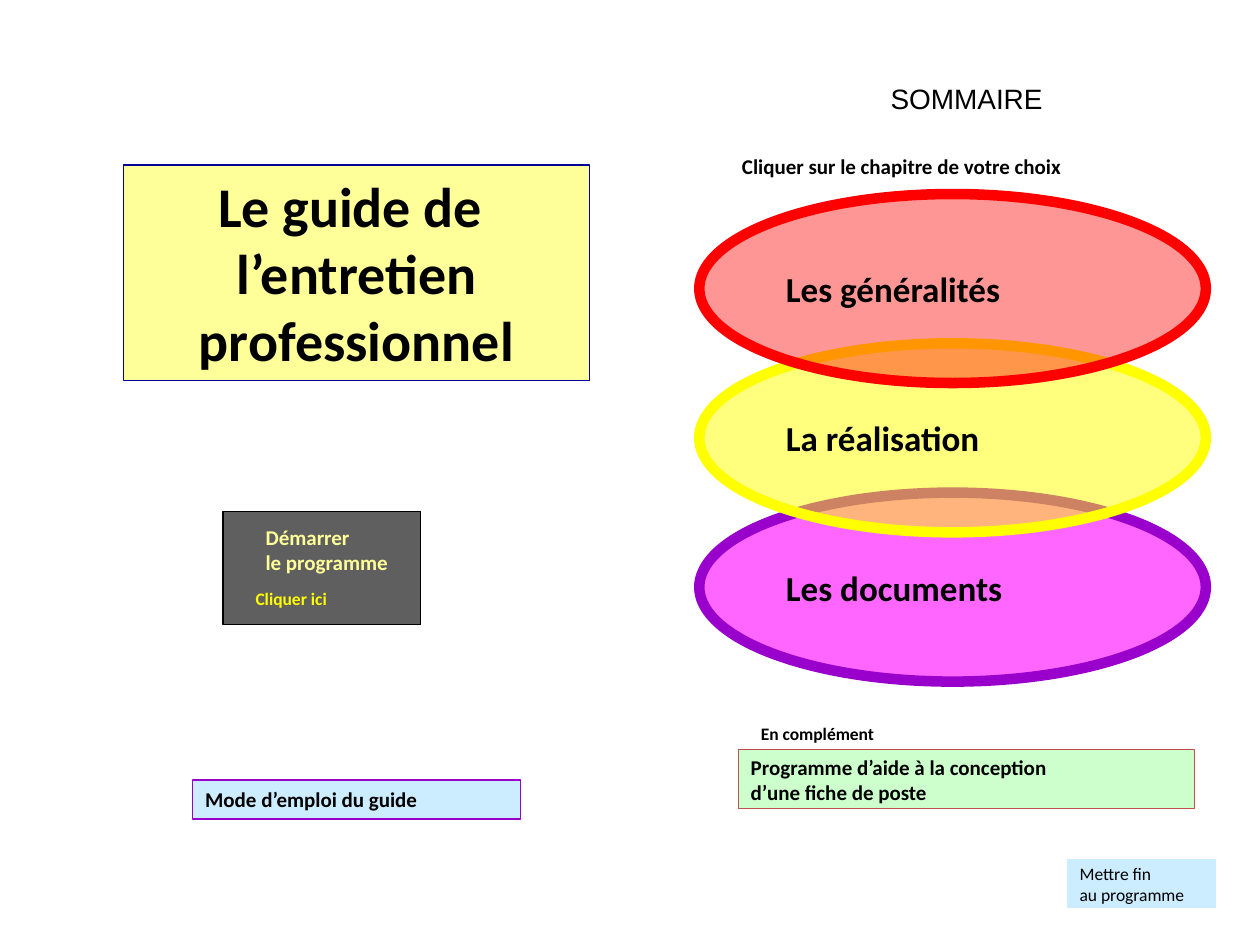
"""Build the cover and contents slide of the professional interview guide."""
from dataclasses import dataclass

from lxml.etree import SubElement
from pptx import Presentation
from pptx.dml.color import RGBColor
from pptx.enum.shapes import MSO_SHAPE as Shape
from pptx.enum.text import MSO_ANCHOR as Anchor, MSO_AUTO_SIZE as AutoSize, PP_ALIGN as Align
from pptx.oxml.ns import qn
from pptx.util import Inches, Pt


@dataclass(frozen=True)
class Theme:
    """Colours, fonts and type sizes of the slide."""
    font: str = "Calibri"
    heading_font: str = "Arial"
    black: str = "000000"
    red: str = "FF0000"
    yellow: str = "FFFF00"
    magenta: str = "FF00FF"
    purple: str = "9900CC"
    cream: str = "FFFF99"
    navy: str = "000099"
    grey: str = "5F5F5F"
    sky: str = "CCECFF"
    mint: str = "CCFFCC"
    brick: str = "C0504D"
    title: int = 32
    chapter: int = 20
    heading: int = 16
    body: int = 12
    small: int = 10
    thin: float = 0.75
    thick: int = 6


THEME = Theme()


def write_text(shape, lines, size, color=THEME.black, font=THEME.font, bold=True,
               align=Align.LEFT, anchor=Anchor.TOP, wrap=True):
    """Fill a shape with one formatted paragraph for each line."""
    frame = shape.text_frame
    frame_format = {"word_wrap": wrap, "auto_size": AutoSize.NONE, "vertical_anchor": anchor}
    for name, value in frame_format.items():
        setattr(frame, name, value)
    frame.text = "\n".join(lines)
    run_format = {"name": font, "size": Pt(size), "bold": bold}
    for paragraph in frame.paragraphs:
        paragraph.alignment = align
        for run in paragraph.runs:
            for name, value in run_format.items():
                setattr(run.font, name, value)
            run.font.color.rgb = RGBColor.from_string(color)


def paint(shape, fill, line=None, width=THEME.thin, opacity=100):
    """Set the fill, its opacity and the outline of a shape."""
    shape.fill.solid()
    shape.fill.fore_color.rgb = RGBColor.from_string(fill)
    if opacity < 100:
        color = shape.fill._xPr.find(qn("a:solidFill"))[0]
        SubElement(color, qn("a:alpha")).set("val", str(opacity * 1000))
    if line is None:
        shape.line.fill.background()
    else:
        shape.line.color.rgb = RGBColor.from_string(line)
        shape.line.width = Pt(width)


def add_panel(shapes, kind, box, fill, line=None, **style):
    """Add a painted preset shape without a shadow."""
    shape = shapes.add_shape(kind, *map(Inches, box))
    shape.shadow.inherit = False
    paint(shape, fill, line, **style)
    return shape


def add_label(shapes, box, lines, size, **style):
    """Add a plain text box."""
    label = shapes.add_textbox(*map(Inches, box))
    write_text(label, lines, size, **style)


def place_title(slide):
    """Move and format the title placeholder as the cover panel."""
    title = slide.shapes.title
    box = dict(zip(("left", "top", "width", "height"), (0.98, 1.31, 3.7, 1.71)))
    for name, value in box.items():
        setattr(title, name, Inches(value))
    paint(title, THEME.cream, THEME.navy)
    write_text(title, ["Le guide de ", "l’entretien professionnel"], THEME.title,
               align=Align.CENTER)


def add_chapters(shapes):
    """Stack the overlapping chapter ellipses from the bottom one up."""
    chapters = [
        ("Les généralités", THEME.red, THEME.red, 41),
        ("La réalisation", THEME.yellow, THEME.yellow, 51),
        ("Les documents", THEME.magenta, THEME.purple, 60),
    ]
    top, step = 1.54, 1.185
    for index, (name, fill, line, opacity) in reversed(list(enumerate(chapters))):
        ellipse = add_panel(shapes, Shape.OVAL, (5.55, top + index * step, 4.02, 1.5),
                            fill, line, width=THEME.thick, opacity=opacity)
        write_text(ellipse, [name], THEME.chapter, anchor=Anchor.MIDDLE)


def add_start_button(shapes):
    """Add the grouped start button and its prompt."""
    group = shapes.add_group_shape()
    add_panel(group.shapes, Shape.RECTANGLE, (1.77, 4.06, 1.57, 0.9), THEME.grey, THEME.black)
    add_label(group.shapes, (2.01, 4.15, 1.97, 0.43), ["Démarrer", "le programme"],
              THEME.body, color=THEME.cream, anchor=Anchor.MIDDLE)
    add_label(shapes, (1.93, 4.62, 1.26, 0.27), ["Cliquer ici"], THEME.small,
              color=THEME.yellow)


def add_links(shapes):
    """Add the link panels at the foot of the slide."""
    guide = add_panel(shapes, Shape.RECTANGLE, (1.53, 6.19, 2.6, 0.31),
                      THEME.sky, THEME.purple)
    write_text(guide, ["Mode d’emploi du guide"], THEME.body)
    job_sheet = add_panel(shapes, Shape.RECTANGLE, (5.86, 5.95, 3.62, 0.47),
                          THEME.mint, THEME.brick)
    write_text(job_sheet, ["Programme d’aide à la conception", "d’une fiche de poste"],
               THEME.body, anchor=Anchor.MIDDLE)
    leave = add_panel(shapes, Shape.ACTION_BUTTON_CUSTOM, (8.47, 6.82, 1.18, 0.39), THEME.sky)
    write_text(leave, ["Mettre fin", "au programme"], THEME.small, bold=False,
               anchor=Anchor.MIDDLE)


def main():
    """Build and save the slide."""
    presentation = Presentation()
    presentation.slide_width, presentation.slide_height = Inches(10), Inches(7.5)
    slide = presentation.slides.add_slide(presentation.slide_layouts[5])
    shapes = slide.shapes
    place_title(slide)
    add_label(shapes, (6.97, 0.6, 1.17, 0.25), ["SOMMAIRE"], THEME.heading,
              font=THEME.heading_font, bold=False, wrap=False)
    add_label(shapes, (5.79, 1.17, 3.47, 0.3), ["Cliquer sur le chapitre de votre choix"],
              THEME.body)
    add_chapters(shapes)
    add_label(shapes, (5.94, 5.69, 3.47, 0.27), ["En complément"], THEME.small)
    add_links(shapes)
    add_start_button(shapes)
    presentation.save("out.pptx")


if __name__ == "__main__":
    main()
